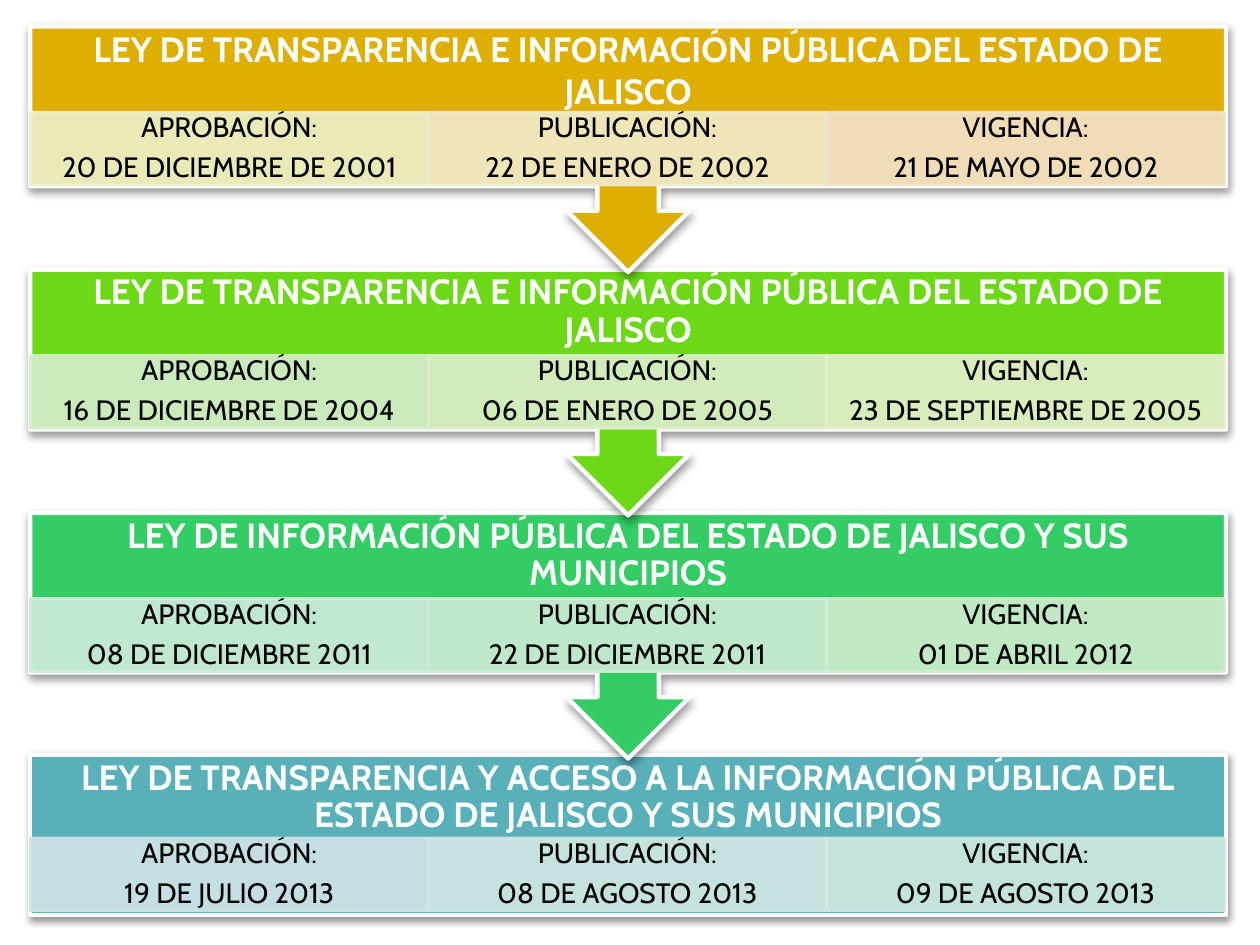
import dataclasses

import lxml.etree
import pptx
import pptx.dml.color
import pptx.enum.shapes
import pptx.enum.text
import pptx.oxml.ns
import pptx.util

Inches = pptx.util.Inches
Pt = pptx.util.Pt
SHAPES = pptx.enum.shapes.MSO_SHAPE


@dataclasses.dataclass(frozen=True)
class Theme:
    font: str = "Cabin"
    title_size: int = 20
    date_size: int = 16
    title_color: str = "FFFFFF"
    date_color: str = "000000"
    outline: str = "FFFFFF"
    shadow: str = "000000"
    laws: tuple = ("DEAE00", "6DD818", "34CD65", "59B0B9")
    dates: tuple = (
        ("EEF0CC", "F1EBCC", "F2E3CB"),
        ("D6EDCE", "DDEECD", "E5EFCD"),
        ("D0EADB", "CFEBD5", "CFECCE"),
        ("D1E4E6", "D1E7E5", "D0E9E1"),
    )


def rgb(code):
    return pptx.dml.color.RGBColor.from_string(code)


def add_child(parent, tag, **attributes):
    return lxml.etree.SubElement(parent, pptx.oxml.ns.qn(tag), attributes)


class SlideBuilder:
    def __init__(self, slide, theme):
        self.slide = slide
        self.theme = theme

    def shape(self, preset, box, fill, outline, width):
        shape = self.slide.shapes.add_shape(preset, *map(Inches, box))
        shape.fill.solid()
        shape.fill.fore_color.rgb = rgb(fill)
        shape.line.color.rgb = rgb(outline)
        shape.line.width = Pt(width)
        shape.shadow.inherit = False
        return shape

    def set_text(self, holder, lines, size, color, insets, bold=False, spacing=0.9):
        frame = holder.text_frame
        frame.word_wrap = True
        frame.vertical_anchor = pptx.enum.text.MSO_ANCHOR.MIDDLE
        frame.margin_left = frame.margin_right = Inches(insets[0])
        frame.margin_top = frame.margin_bottom = Inches(insets[1])
        frame.text = "\n".join(lines)
        for paragraph in frame.paragraphs:
            paragraph.alignment = pptx.enum.text.PP_ALIGN.CENTER
            paragraph.line_spacing = spacing
            paragraph.space_after = Pt(0.35 * size if spacing < 1 else 0)
            for run in paragraph.runs:
                run.font.name = self.theme.font
                run.font.size = Pt(size)
                run.font.bold = bold
                run.font.color.rgb = rgb(color)

    def panel(self, preset, box, fill):
        panel = self.shape(preset, box, fill, self.theme.outline, 2.5)
        if preset == SHAPES.UP_ARROW_CALLOUT:
            panel.rotation = 180
        effects = panel._element.spPr.find(pptx.oxml.ns.qn("a:effectLst"))
        shadow = add_child(effects, "a:outerShdw", blurRad=str(Pt(4.1)),
                           dist=str(Pt(2)), dir="5400000", rotWithShape="0")
        color = add_child(shadow, "a:srgbClr", val=self.theme.shadow)
        add_child(color, "a:alpha", val="40000")

    def title(self, box, text, spacing):
        title = self.slide.shapes.add_textbox(*map(Inches, box))
        self.set_text(title, [text], self.theme.title_size, self.theme.title_color,
                      (0.16, 0.16), bold=True, spacing=spacing)

    def date(self, box, lines, fill):
        cell = self.shape(SHAPES.RECTANGLE, box, fill, fill, 1.5)
        for color in cell._element.spPr.iter(pptx.oxml.ns.qn("a:srgbClr")):
            add_child(color, "a:alpha", val="90000")
        self.set_text(cell, lines, self.theme.date_size, self.theme.date_color,
                      (0.12, 0.02))


STAGES = ("APROBACIÓN:", "PUBLICACIÓN:", "VIGENCIA:")
LAWS = (
    ("LEY DE TRANSPARENCIA E INFORMACIÓN PÚBLICA DEL ESTADO DE JALISCO",
     ("20 DE DICIEMBRE DE 2001", "22 DE ENERO DE 2002", "21 DE MAYO DE 2002")),
    ("LEY DE TRANSPARENCIA E INFORMACIÓN PÚBLICA DEL ESTADO DE JALISCO",
     ("16 DE DICIEMBRE DE 2004", "06 DE ENERO DE 2005", "23 DE SEPTIEMBRE DE 2005")),
    ("LEY DE INFORMACIÓN PÚBLICA DEL ESTADO DE JALISCO Y SUS MUNICIPIOS",
     ("08 DE DICIEMBRE 2011", "22 DE DICIEMBRE 2011", "01 DE ABRIL 2012")),
    ("LEY DE TRANSPARENCIA Y ACCESO A LA INFORMACIÓN PÚBLICA DEL ESTADO DE "
     "JALISCO Y SUS MUNICIPIOS",
     ("19 DE JULIO 2013", "08 DE AGOSTO 2013", "09 DE AGOSTO 2013")),
)
LEFT, TOP, WIDTH, PITCH = 0.24, 0.21, 9.49, 1.93
TITLE_HEIGHT, DATE_WIDTH, DATE_HEIGHT = 0.68, 3.16, 0.58


def main():
    presentation = pptx.Presentation()
    presentation.slide_width = Inches(10)
    presentation.slide_height = Inches(7.5)
    slide = presentation.slides.add_slide(presentation.slide_layouts[6])
    theme = Theme()
    builder = SlideBuilder(slide, theme)

    for index, (law, dates) in reversed(list(enumerate(LAWS))):
        last = index == len(LAWS) - 1
        top = TOP + PITCH * index - (0.01 if last else 0)
        preset = SHAPES.RECTANGLE if last else SHAPES.UP_ARROW_CALLOUT
        height = 1.27 if last else 1.95
        builder.panel(preset, (LEFT, top, WIDTH, height), theme.laws[index])
        builder.title((LEFT, top, WIDTH, TITLE_HEIGHT), law, 0.9 if index else 1.0)
        date_top = top + (0.66 if last else TITLE_HEIGHT)
        for column, lines in enumerate(zip(STAGES, dates)):
            box = (LEFT + column * DATE_WIDTH, date_top, DATE_WIDTH, DATE_HEIGHT)
            builder.date(box, lines, theme.dates[index][column])

    presentation.save("out.pptx")


if __name__ == "__main__":
    main()
